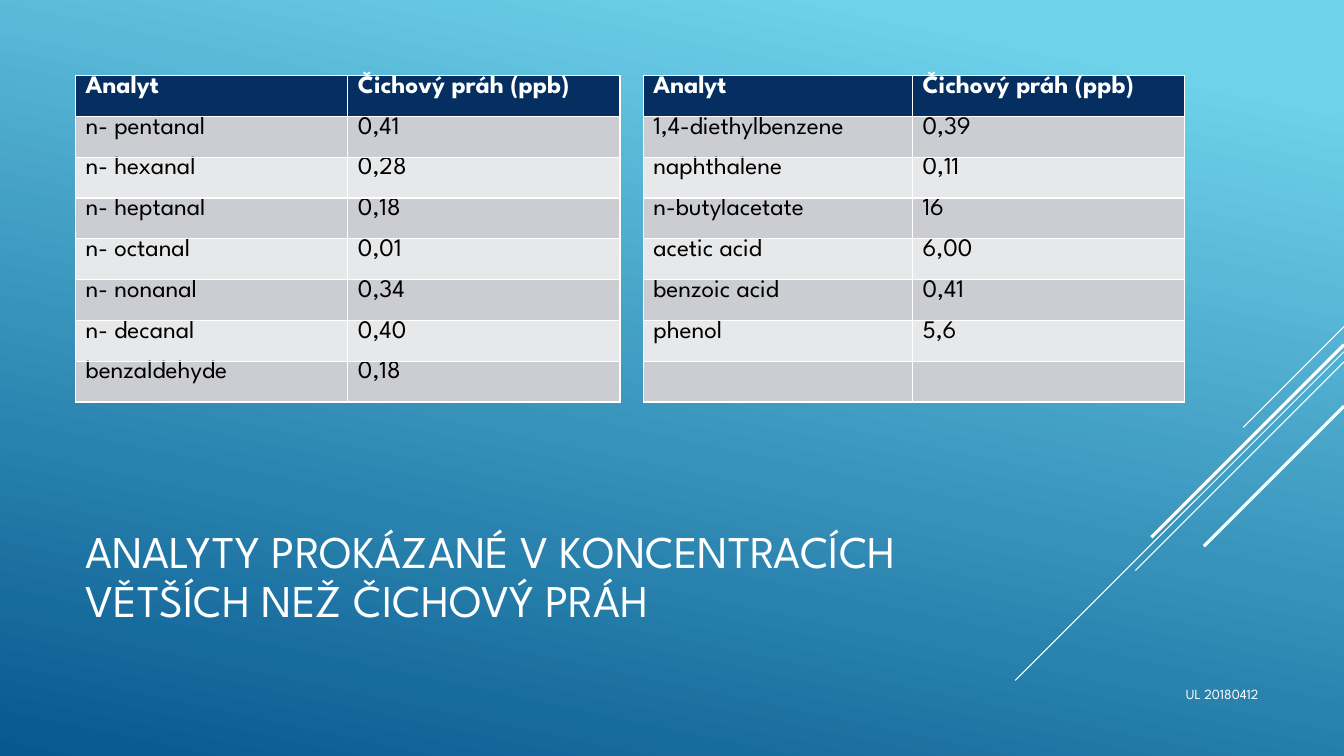
from dataclasses import dataclass
from lxml import etree
from pptx import Presentation
from pptx.dml.color import RGBColor
from pptx.enum.text import MSO_ANCHOR, PP_ALIGN
from pptx.oxml.ns import qn
from pptx.util import Inches, Pt

MIDDLE, TOP = MSO_ANCHOR.MIDDLE, MSO_ANCHOR.TOP
LEFT, RIGHT = PP_ALIGN.LEFT, PP_ALIGN.RIGHT

TITLE = "ANALYTY PROKÁZANÉ V KONCENTRACÍCH VĚTŠÍCH NEŽ ČICHOVÝ PRÁH"
NOTE = "UL 20180412"
HEAD = ("Analyt", "Čichový práh (ppb)")
# left edge, column widths, rows
TABLES = [
    (0.75, (2.7, 2.7), [
        ("n- pentanal", "0,41"), ("n- hexanal", "0,28"),
        ("n- heptanal", "0,18"), ("n- octanal", "0,01"),
        ("n- nonanal", "0,34"), ("n- decanal", "0,40"),
        ("benzaldehyde", "0,18")]),
    (6.38, (2.67, 2.7), [
        ("1,4-diethylbenzene", "0,39"), ("naphthalene", "0,11"),
        ("n-butylacetate", "16"), ("acetic acid", "6,00"),
        ("benzoic acid", "0,41"), ("phenol", "5,6"), ("", "")]),
]
# height at the right edge, run to the lower left, line width
RAYS = [(3.24, 1, 0.75), (3.49, 3.26, 0.75), (3.59, 2.07, 0.75),
        (3.42, 1.91, 2.25), (4.03, 1.39, 2.25)]
WIDE, HIGH = 13.33, 7.5
TABLE_TOP, ROW = 0.75, 0.405


@dataclass(frozen=True)
class Theme:
    font: str = "League Spartan"
    white: str = "FFFFFF"
    black: str = "000000"
    navy: str = "052F61"
    bands: tuple = ("CCCDD2", "E7E8EA")
    sky: tuple = ((0.1, "6ED2EB"), (1, "06588E"))
    angle: int = 258
    title: float = 32.4
    cell: float = 18
    note: float = 10


THEME = Theme()


def rgb(code):
    return RGBColor.from_string(code)


def write(frame, text, size, color, bold=False, align=LEFT):
    para = frame.paragraphs[0]
    para.text = text
    para.alignment = align
    font = para.font
    font.name, font.size, font.bold = THEME.font, Pt(size), bold
    font.color.rgb = rgb(color)
    return para


def add_text(slide, box, text, size, anchor=TOP, align=LEFT):
    frame = slide.shapes.add_textbox(*map(Inches, box)).text_frame
    frame.word_wrap = True
    frame.vertical_anchor = anchor
    return write(frame, text, size, THEME.white, align=align)


def add_ray(slide, top, run, width):
    ends = (WIDE, top, WIDE - run, top + run)
    ray = slide.shapes.add_connector(1, *map(Inches, ends))
    ray.line.color.rgb = rgb(THEME.white)
    ray.line.width = Pt(width)
    etree.SubElement(ray._element.spPr, qn("a:effectLst"))


def add_grid(slide, left, widths, rows):
    lines = [HEAD, *rows]
    box = (left, TABLE_TOP, sum(widths), ROW * len(lines))
    grid = slide.shapes.add_table(
        len(lines), len(widths), *map(Inches, box)).table
    for col, width in zip(grid.columns, widths):
        col.width = Inches(width)
    for r, line in enumerate(lines):
        head = r == 0
        fill = THEME.navy if head else THEME.bands[(r - 1) % 2]
        color = THEME.white if head else THEME.black
        for c, text in enumerate(line):
            cell = grid.cell(r, c)
            cell.margin_top = cell.margin_bottom = 0
            cell.fill.solid()
            cell.fill.fore_color.rgb = rgb(fill)
            write(cell.text_frame, text, THEME.cell, color, head)


def main():
    deck = Presentation()
    deck.slide_width, deck.slide_height = Inches(WIDE), Inches(HIGH)
    slide = deck.slides.add_slide(deck.slide_layouts[6])
    back = slide.background.fill
    back.gradient()
    back.gradient_angle = THEME.angle
    for stop, (place, color) in zip(back.gradient_stops, THEME.sky):
        stop.position = place
        stop.color.rgb = rgb(color)
    for ray in RAYS:
        add_ray(slide, *ray)
    title = add_text(slide, (0.75, 4.91, 9.33, 1.65), TITLE,
                     THEME.title, MIDDLE)
    title.line_spacing = 0.9
    for table in TABLES:
        add_grid(slide, *table)
    add_text(slide, (10.83, 6.75, 1.75, 0.4), NOTE, THEME.note, align=RIGHT)
    deck.save("out.pptx")


if __name__ == "__main__":
    main()
